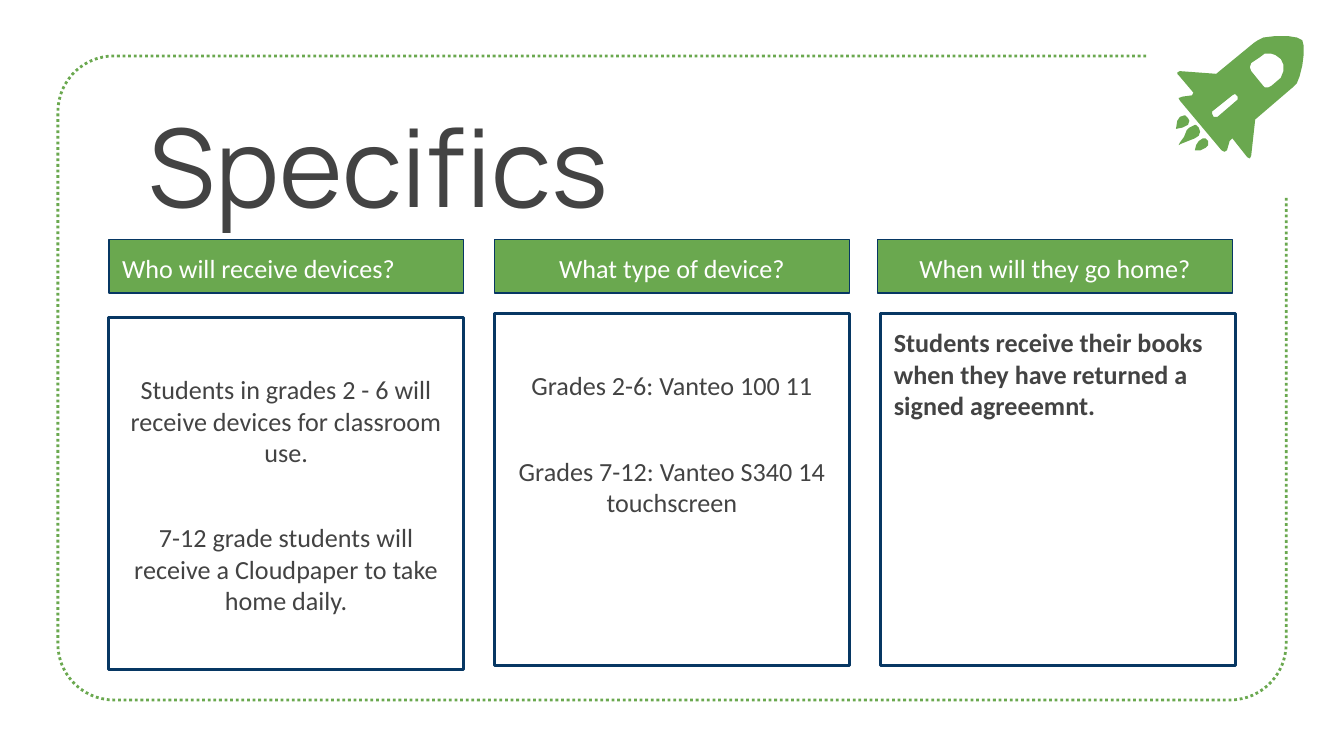
from math import cos, radians, sin

from pptx import Presentation
from pptx.dml.color import RGBColor
from pptx.enum.dml import MSO_LINE
from pptx.enum.shapes import MSO_SHAPE
from pptx.enum.text import MSO_ANCHOR, PP_ALIGN
from pptx.util import Pt

COLORS = {"green": "6AA84F", "navy": "073763", "text": "434343", "white": "FFFFFF"}
LEFT, CENTER = PP_ALIGN.LEFT, PP_ALIGN.CENTER

# Rocket outlines on a 95-unit grid; later contours of a part are holes
ROCKET_GRID = 95
ROCKET_PARTS = [
    [  # body, window and slot
        [(81, 0), (73, 0), (65, 1), (61, 3), (58, 5), (30, 28), (3, 26), (1, 27),
         (1, 28), (2, 29), (13, 42), (12, 44), (5, 45), (2, 46), (3, 48), (34, 85),
         (36, 86), (38, 85), (40, 78), (42, 76), (53, 90), (55, 91), (56, 89),
         (59, 62), (87, 38), (90, 35), (92, 30), (94, 22), (95, 14), (95, 7),
         (94, 3), (90, 1), (84, 0)],
        [(71, 13), (74, 14), (78, 17), (80, 21), (80, 26), (78, 31), (71, 37),
         (69, 38), (66, 38), (65, 37), (56, 26), (55, 23), (56, 20), (62, 16),
         (66, 13)],
        [(44, 43), (46, 45), (46, 47), (45, 48), (31, 60), (28, 60), (27, 58),
         (27, 56), (42, 44)],
    ],
    # three flames
    [[(14, 66), (10, 68), (8, 70), (6, 75), (3, 79), (2, 81), (4, 80), (14, 76),
      (17, 74), (18, 71), (17, 68), (15, 66)]],
    [[(20, 76), (17, 78), (15, 81), (14, 85), (18, 85), (22, 83), (24, 81),
      (24, 78), (22, 76)]],
    [[(6, 59), (3, 60), (1, 63), (0, 69), (5, 68), (9, 66), (10, 63), (9, 61),
      (7, 59)]],
]


def rgb(name):
    return RGBColor.from_string(COLORS[name])


def write(tf, paragraphs, size, font, color, align=LEFT, bold=False, gap=0, top=7.2):
    tf.word_wrap = True
    tf.vertical_anchor = MSO_ANCHOR.TOP
    tf.margin_left = tf.margin_right = tf.margin_bottom = Pt(7.2)
    tf.margin_top = Pt(top)
    tf.text = "\n".join(paragraphs)
    for i, p in enumerate(tf.paragraphs):
        p.alignment = align
        if i:
            p.space_before = Pt(gap)
        for r in p.runs:
            r.font.size = Pt(size)
            r.font.name = font
            r.font.bold = bold
            r.font.color.rgb = rgb(color)


def add_box(slide, x, y, w, h, fill, line_width):
    s = slide.shapes.add_shape(MSO_SHAPE.RECTANGLE, Pt(x), Pt(y), Pt(w), Pt(h))
    s.shadow.inherit = False
    if fill:
        s.fill.solid()
        s.fill.fore_color.rgb = rgb(fill)
    else:
        s.fill.background()
    s.line.color.rgb = rgb("navy")
    s.line.width = Pt(line_width)
    return s


def add_frame(slide, x, y, w, h, radius=30, gap_x=75, gap_y=75):
    """Dotted rounded border, open at its top right corner."""
    right, bottom = x + w, y + h
    corners = [(x + radius, y + radius, 270), (x + radius, bottom - radius, 180),
               (right - radius, bottom - radius, 90)]
    points = [(cx + radius * cos(radians(start - step)),
               cy + radius * sin(radians(start - step)))
              for cx, cy, start in corners for step in range(0, 91, 6)]
    points.append((right, y + gap_y))
    fb = slide.shapes.build_freeform(Pt(right - gap_x), Pt(y))
    fb.add_line_segments([(Pt(px), Pt(py)) for px, py in points], close=False)
    s = fb.convert_to_shape()
    s.shadow.inherit = False
    s.fill.background()
    s.line.color.rgb = rgb("green")
    s.line.width = Pt(1.5)
    s.line.dash_style = MSO_LINE.ROUND_DOT


def add_rocket(slide, x, y, w):
    for contours in ROCKET_PARTS:
        first, *holes = contours
        fb = slide.shapes.build_freeform(*first[0], scale=Pt(w) / ROCKET_GRID)
        fb.add_line_segments(first[1:])
        for hole in holes:
            fb.move_to(*hole[0])
            fb.add_line_segments(hole[1:])
        s = fb.convert_to_shape(Pt(x), Pt(y))
        s.shadow.inherit = False
        s.fill.solid()
        s.fill.fore_color.rgb = rgb("green")
        s.line.fill.background()


def add_title(slide, x, y, w, h, text):
    tb = slide.shapes.add_textbox(Pt(x), Pt(y), Pt(w), Pt(h))
    write(tb.text_frame, [text], 58, "Manrope", "text")


def add_header(slide, x, y, w, h, text, align):
    s = add_box(slide, x, y, w, h, "green", 0.75)
    write(s.text_frame, [text], 14, "Calibri", "white", align)


def add_body(slide, x, y, w, h, paragraphs, align, bold, top):
    s = add_box(slide, x, y, w, h, None, 1.5)
    write(s.text_frame, paragraphs, 14, "Calibri", "text", align, bold, 29, top)


def main():
    prs = Presentation()
    prs.slide_width, prs.slide_height = Pt(720), Pt(405)
    slide = prs.slides.add_slide(prs.slide_layouts[6])

    add_frame(slide, 31, 30, 658, 345)
    add_rocket(slide, 630, 19.4, 68.4)
    add_title(slide, 72.7, 46, 540.7, 67.7, "Specifics")

    # Columns: header, its x and alignment, body y, text, alignment, bold, top inset
    columns = [
        ("Who will receive devices?", 58.3, LEFT, 169.9,
         ["Students in grades 2 - 6 will receive devices for classroom use.",
          "7-12 grade students will receive a Cloudpaper to take home daily."],
         CENTER, False, 30.2),
        ("What type of device?", 265, CENTER, 167.8,
         ["Grades 2-6: Vanteo 100 11", "Grades 7-12: Vanteo S340 14 touchscreen"],
         CENTER, False, 30.2),
        ("When will they go home?", 470.2, CENTER, 167.8,
         ["Students receive their books when they have returned a signed agreeemnt."],
         LEFT, True, 7.2),
    ]
    width, pitch = 190, 206.7
    for i, (header, x, header_align, y, text, align, bold, top) in enumerate(columns):
        add_header(slide, x, 128.2, width, 28.8, header, header_align)
        add_body(slide, 58.3 + i * pitch, y, width, 188.6, text, align, bold, top)

    prs.save("out.pptx")


if __name__ == "__main__":
    main()
